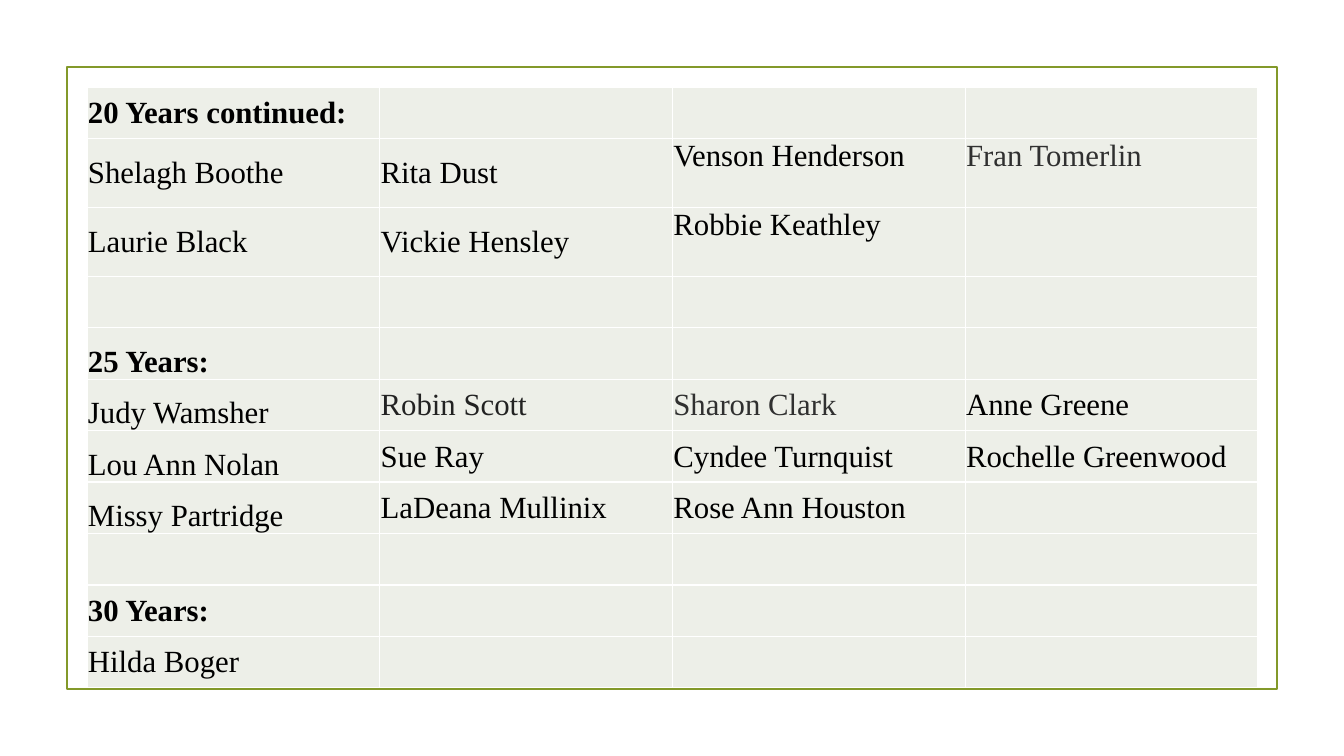
from lxml.etree import SubElement
from pptx import Presentation
from pptx.dml.color import RGBColor
from pptx.enum.shapes import MSO_SHAPE
from pptx.enum.text import MSO_ANCHOR
from pptx.oxml.ns import qn
from pptx.util import Pt

PX = 914400 / 100.8
WIDE, HIGH = 1344, 756
FRAME = (67, 67, 1210, 622)
GRID = (87, 87, 1171, 601)
TALL = 69
TALL_ROWS = (1, 2)

BLACK = RGBColor(0x00, 0x00, 0x00)
GRAY = RGBColor(0x30, 0x30, 0x30)
DARK = RGBColor(0x22, 0x22, 0x22)
OLIVE = RGBColor(0x83, 0x99, 0x2A)
PALE = RGBColor(0xED, 0xEF, 0xE8)
WHITE = RGBColor(0xFF, 0xFF, 0xFF)

ROWS = [
    ["20 Years continued:"],
    ["Shelagh Boothe", "Rita Dust", "Venson Henderson", "Fran Tomerlin"],
    ["Laurie Black", "Vickie Hensley", "Robbie Keathley"],
    [],
    ["25 Years:"],
    ["Judy Wamsher", "Robin Scott", "Sharon Clark", "Anne Greene"],
    ["Lou Ann Nolan", "Sue Ray", "Cyndee Turnquist", "Rochelle Greenwood"],
    ["Missy Partridge", "LaDeana Mullinix", "Rose Ann Houston"],
    [],
    ["30 Years:"],
    ["Hilda Boger"],
]
COLS = 4
HEADS = (0, 4, 9)
LOW_ROWS = (4, 5, 6, 7)
TINTS = {"Fran Tomerlin": GRAY, "Robin Scott": DARK, "Sharon Clark": GRAY}


def emu(px):
    return round(px * PX)


def edge(cell):
    """Give the cell white 1 pt borders; they must precede its fill."""
    props = cell._tc.get_or_add_tcPr()
    for tag in ("a:lnL", "a:lnR", "a:lnT", "a:lnB"):
        line = SubElement(props, qn(tag), w=str(Pt(1)))
        fill = SubElement(line, qn("a:solidFill"))
        SubElement(fill, qn("a:srgbClr"), val=str(WHITE))


def anchor(row, col):
    if col == 0 and row in LOW_ROWS:
        return MSO_ANCHOR.BOTTOM
    if col > 1 and row in TALL_ROWS:
        return MSO_ANCHOR.TOP
    return MSO_ANCHOR.MIDDLE


def write(cell, text, row, col):
    cell.margin_left = cell.margin_right = cell.margin_top = emu(1)
    cell.margin_bottom = 0
    cell.vertical_anchor = anchor(row, col)
    cell.text_frame.text = text
    font = cell.text_frame.paragraphs[0].runs[0].font
    font.name = "Times New Roman"
    font.size = Pt(22)
    font.bold = row in HEADS
    font.color.rgb = TINTS.get(text, BLACK)


def add_frame(slide):
    frame = slide.shapes.add_shape(MSO_SHAPE.RECTANGLE, *map(emu, FRAME))
    frame.shadow.inherit = False
    frame.fill.background()
    frame.line.color.rgb = OLIVE
    frame.line.width = Pt(1.25)


def add_names(slide):
    table = slide.shapes.add_table(len(ROWS), COLS, *map(emu, GRID)).table
    table.first_row = table.horz_banding = False
    short = (GRID[3] - TALL * len(TALL_ROWS)) / (len(ROWS) - len(TALL_ROWS))
    for col in table.columns:
        col.width = emu(GRID[2] / COLS)
    for r, names in enumerate(ROWS):
        table.rows[r].height = emu(TALL if r in TALL_ROWS else short)
        for c in range(COLS):
            cell = table.cell(r, c)
            edge(cell)
            cell.fill.solid()
            cell.fill.fore_color.rgb = PALE
            if c < len(names):
                write(cell, names[c], r, c)


def main():
    deck = Presentation()
    deck.slide_width, deck.slide_height = emu(WIDE), emu(HIGH)
    slide = deck.slides.add_slide(deck.slide_layouts[6])
    add_frame(slide)
    add_names(slide)
    deck.save("out.pptx")


if __name__ == "__main__":
    main()
